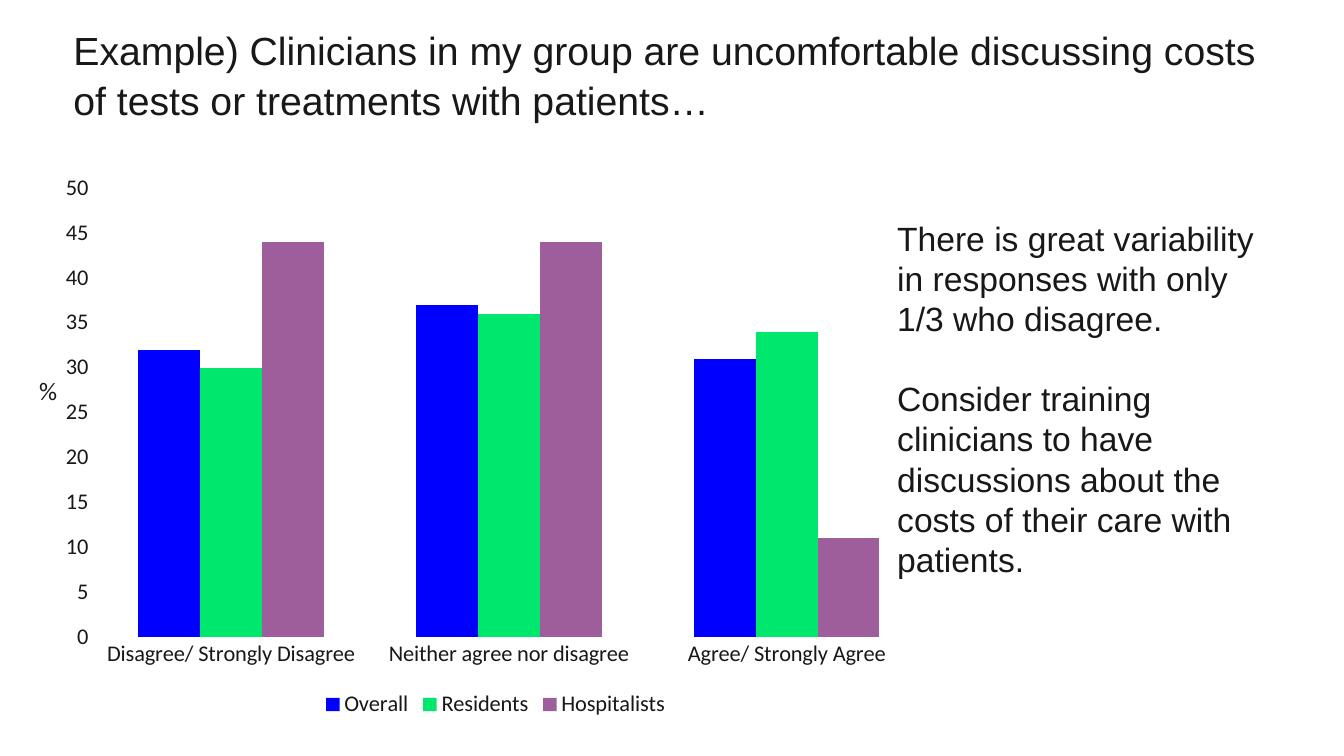
"""Build a slide charting how comfortable clinicians are discussing costs."""
from lxml.etree import SubElement
from pptx import Presentation
from pptx.chart.data import CategoryChartData
from pptx.dml.color import RGBColor
from pptx.enum.chart import XL_CHART_TYPE, XL_LEGEND_POSITION, XL_TICK_MARK
from pptx.oxml.ns import qn
from pptx.util import Inches, Pt

INK = RGBColor(0x18, 0x18, 0x18)
BLUE = RGBColor(0x00, 0x00, 0xFF)
GREEN = RGBColor(0x00, 0xE7, 0x6D)
PURPLE = RGBColor(0x9E, 0x5E, 0x9B)


def style_font(font, name, size):
    font.name = name
    font.size = Pt(size)
    font.color.rgb = INK


def add_text(slide, box, paragraphs, font_name, size, wrap=True):
    text_frame = slide.shapes.add_textbox(*map(Inches, box)).text_frame
    text_frame.word_wrap = wrap
    for index, text in enumerate(paragraphs):
        paragraph = text_frame.add_paragraph() if index else text_frame.paragraphs[0]
        if index:
            paragraph.space_before = Pt(28)
        run = paragraph.add_run()
        run.text = text
        style_font(run.font, font_name, size)
    return text_frame


presentation = Presentation()
presentation.slide_width = Inches(13.33)
presentation.slide_height = Inches(7.5)
slide = presentation.slides.add_slide(presentation.slide_layouts[6])

title = add_text(slide, (0.63, 0.18, 12.18, 1.11), [
    "Example) Clinicians in my group are uncomfortable discussing costs "
    "of tests or treatments with patients…"], "Arial", 28)
title.paragraphs[0].line_spacing = 1.07
title.paragraphs[0].space_after = Pt(8)

responses = [
    ("Overall", (32, 37, 31), BLUE),
    ("Residents", (30, 36, 34), GREEN),
    ("Hospitalists", (44, 44, 11), PURPLE),
]
chart_data = CategoryChartData()
chart_data.categories = [
    "Disagree/ Strongly Disagree", "Neither agree nor disagree", "Agree/ Strongly Agree"]
for name, values, color in responses:
    chart_data.add_series(name, values)

chart = slide.shapes.add_chart(
    XL_CHART_TYPE.COLUMN_CLUSTERED, Inches(0.47), Inches(1.62),
    Inches(8.89), Inches(5.55), chart_data).chart
chart.has_title = False
style_font(chart.font, "Calibri", 16)

plot = chart.plots[0]
plot.gap_width = 150
plot.overlap = 0
plot.vary_by_categories = False
for series, (name, values, color) in zip(plot.series, responses):
    series.format.fill.solid()
    series.format.fill.fore_color.rgb = color
    series.invert_if_negative = False

for axis in (chart.category_axis, chart.value_axis):
    axis.has_major_gridlines = False
    axis.major_tick_mark = XL_TICK_MARK.NONE
    axis.minor_tick_mark = XL_TICK_MARK.NONE
    axis.format.line.fill.background()
    style_font(axis.tick_labels.font, "Calibri", 16)
chart.value_axis.minimum_scale = 0
chart.value_axis.maximum_scale = 50
chart.value_axis.major_unit = 5

chart.has_legend = True
chart.legend.position = XL_LEGEND_POSITION.BOTTOM
chart.legend.include_in_layout = False
style_font(chart.legend.font, "Calibri", 16)

plot_area = chart.element.find(".//" + qn("c:plotArea"))
for layout in plot_area.findall(qn("c:layout")):
    plot_area.remove(layout)
layout = SubElement(plot_area, qn("c:layout"))
plot_area.insert(0, layout)
manual_layout = SubElement(layout, qn("c:manualLayout"))
for tag, value in (("layoutTarget", "inner"), ("xMode", "edge"), ("yMode", "edge"),
                   ("x", "0.05"), ("y", "0.044"), ("w", "0.93"), ("h", "0.803")):
    SubElement(manual_layout, qn("c:" + tag)).set("val", value)

add_text(slide, (8.8, 2.11, 4.01, 3.74), [
    "There is great variability in responses with only 1/3 who disagree.",
    "Consider training clinicians to have discussions about the costs of "
    "their care with patients."], "Arial", 24)
add_text(slide, (0.29, 3.67, 0.38, 0.4), ["%"], "Calibri", 18, wrap=False)

presentation.save("out.pptx")
